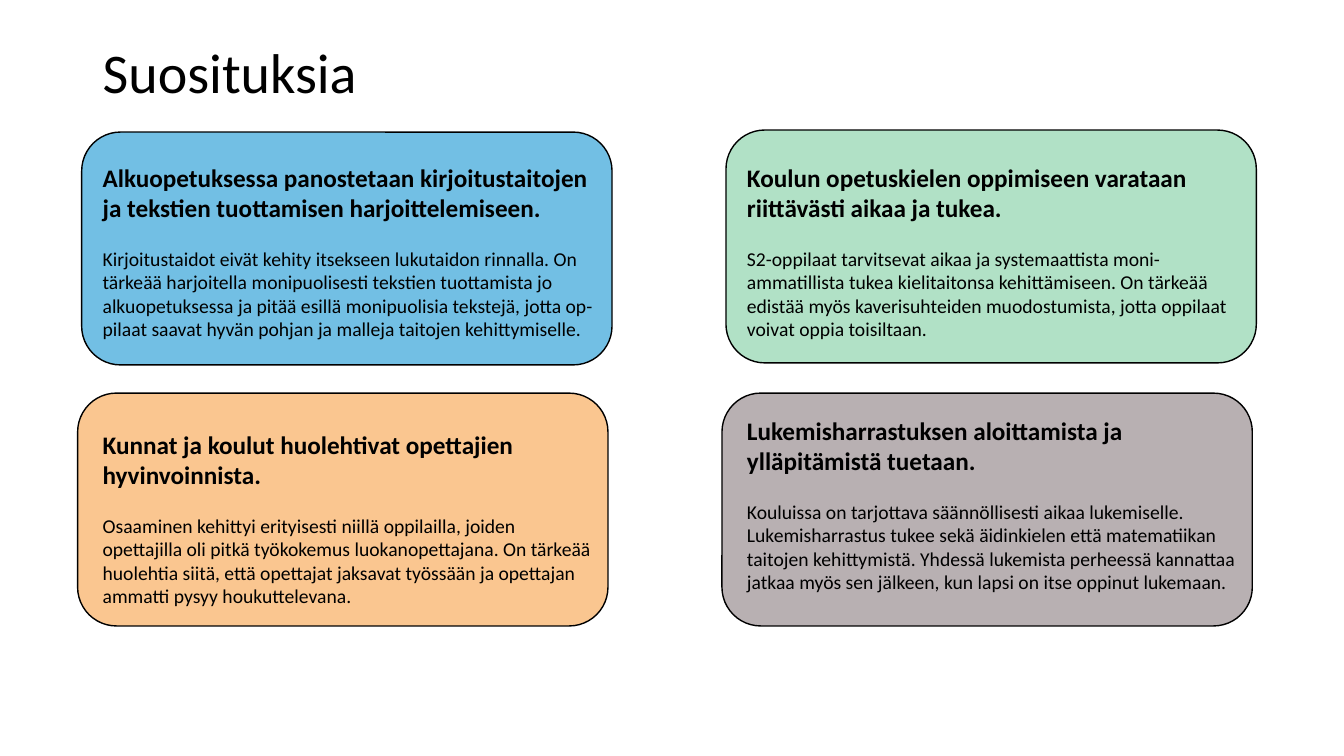
from dataclasses import dataclass

from lxml.etree import SubElement
from pptx import Presentation
from pptx.dml.color import RGBColor
from pptx.enum.shapes import MSO_SHAPE
from pptx.enum.text import MSO_ANCHOR
from pptx.oxml.ns import qn
from pptx.slide import Slide
from pptx.util import Inches, Pt

WIDE, HIGH = Inches(13.33), Inches(7.5)
LEFT, PITCH = 6.9, 47.94
TITLE = {"size": Pt(40), "bold": False, "name": "Calibri"}
HEAD = {"size": Pt(18), "bold": True, "name": "Calibri"}
BODY = {"size": Pt(14), "bold": False, "name": "Calibri"}
FRAME = {"word_wrap": True, "vertical_anchor": MSO_ANCHOR.TOP}


@dataclass
class Card:
    """A coloured panel with a heading and body; places are percent of the slide."""
    col: int
    left: float
    top: float
    text: float
    tall: float
    fill: str
    head: str
    body: str


CARDS = [
    Card(0, 6.08, 17.47, 20.8, 25.07, "1595D3",
         "Alkuopetuksessa panostetaan kirjoitustaitojen ja tekstien tuottamisen "
         "harjoittelemiseen.",
         "Kirjoitustaidot eivät kehity itsekseen lukutaidon rinnalla. On tärkeää "
         "harjoitella monipuolisesti tekstien tuottamista jo alkuopetuksessa ja pitää "
         "esillä monipuolisia tekstejä, jotta op-pilaat saavat hyvän pohjan ja malleja "
         "taitojen kehittymiselle."),
    Card(1, 6.08, 17.2, 20.8, 25.07, "7DCEA0",
         "Koulun opetuskielen oppimiseen varataan riittävästi aikaa ja tukea.",
         "S2-oppilaat tarvitsevat aikaa ja systemaattista moni-ammatillista tukea "
         "kielitaitonsa kehittämiseen. On tärkeää edistää myös kaverisuhteiden "
         "muodostumista, jotta oppilaat voivat oppia toisiltaan."),
    Card(0, 5.78, 52, 56.13, 28.27, "F7A047",
         "Kunnat ja koulut huolehtivat opettajien hyvinvoinnista.",
         "Osaaminen kehittyi erityisesti niillä oppilailla, joiden opettajilla oli pitkä "
         "työkokemus luokanopettajana. On tärkeää huolehtia siitä, että opettajat "
         "jaksavat työssään ja opettajan ammatti pysyy houkuttelevana."),
    Card(1, 5.78, 52, 54.27, 28.27, "897C80",
         "Lukemisharrastuksen aloittamista ja ylläpitämistä tuetaan.",
         "Kouluissa on tarjottava säännöllisesti aikaa lukemiselle. Lukemisharrastus "
         "tukee sekä äidinkielen että matematiikan taitojen kehittymistä. Yhdessä "
         "lukemista perheessä kannattaa jatkaa myös sen jälkeen, kun lapsi on itse "
         "oppinut lukemaan."),
]


def place(left: float, top: float, wide: float, tall: float) -> tuple[int, ...]:
    """Turn percent of the slide into a box in slide units."""
    return tuple(int(share * size / 100) for share, size in
                 zip((left, top, wide, tall), (WIDE, HIGH, WIDE, HIGH)))


def paint(color, code: str) -> None:
    """Set a colour from its hex string."""
    color.rgb = RGBColor.from_string(code)


def apply(target, form: dict) -> None:
    """Set each format value on the target."""
    for key, value in form.items():
        setattr(target, key, value)


def panel(slide: Slide, card: Card) -> None:
    """Draw the translucent rounded panel of a card."""
    box = place(card.left + card.col * PITCH, card.top, 39.46, 30.8)
    shape = slide.shapes.add_shape(MSO_SHAPE.ROUNDED_RECTANGLE, *box)
    shape.shadow.inherit = False
    shape.fill.solid()
    paint(shape.fill.fore_color, card.fill)
    tint = shape.element.spPr.find(qn("a:solidFill")).find(qn("a:srgbClr"))
    SubElement(tint, qn("a:alpha")).set("val", "60000")
    paint(shape.line.color, "000000")
    shape.line.width = Pt(1)


def write(slide: Slide, box: tuple[int, ...], parts: list[tuple[str, dict, dict]]) -> None:
    """Write paragraphs, each with its paragraph and font formats."""
    frame = slide.shapes.add_textbox(*box).text_frame
    apply(frame, FRAME)
    for index, (text, para, font) in enumerate(parts):
        line = frame.add_paragraph() if index else frame.paragraphs[0]
        apply(line, para)
        run = line.add_run()
        run.text = text
        apply(run.font, font)
        paint(run.font.color, "000000")


def main() -> None:
    """Build the slide and save it."""
    deck = Presentation()
    deck.slide_width, deck.slide_height = WIDE, HIGH
    slide = deck.slides.add_slide(deck.slide_layouts[6])
    write(slide, place(LEFT, 5.33, 86.27, 19.33),
          [("Suosituksia", {"line_spacing": 0.9}, TITLE)])
    for card in CARDS:
        panel(slide, card)
        write(slide, place(LEFT + card.col * PITCH, card.text, 38.33, card.tall),
              [(card.head, {}, HEAD), (card.body, {"space_before": Pt(17)}, BODY)])
    deck.save("out.pptx")


if __name__ == "__main__":
    main()
